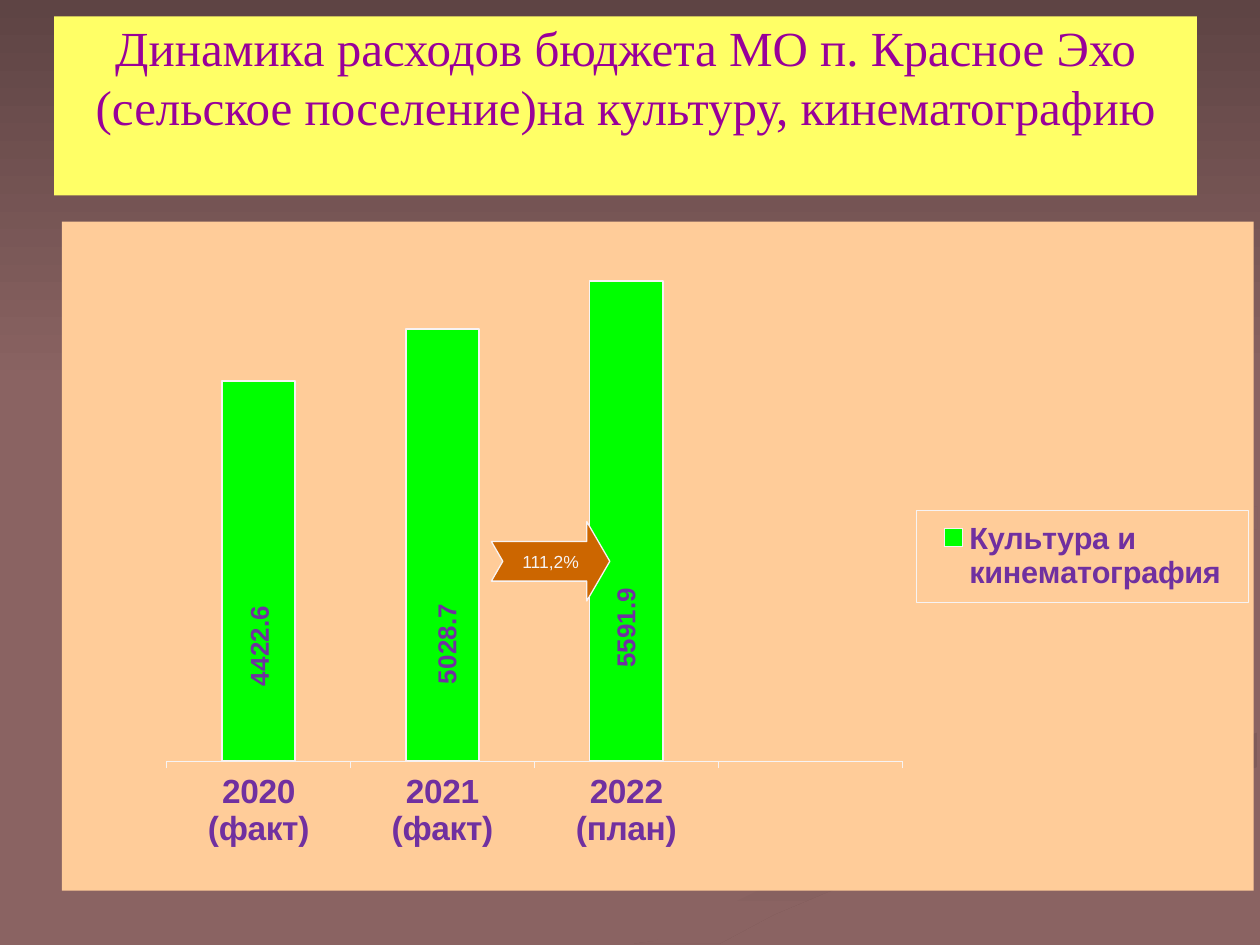
from dataclasses import dataclass

from lxml.etree import SubElement
from pptx import Presentation
from pptx.chart.data import CategoryChartData
from pptx.dml.color import RGBColor
from pptx.enum.chart import XL_CHART_TYPE as Kind
from pptx.enum.chart import XL_LABEL_POSITION as Spot
from pptx.enum.chart import XL_LEGEND_POSITION as Side
from pptx.enum.chart import XL_TICK_LABEL_POSITION as Tick
from pptx.enum.chart import XL_TICK_MARK as Mark
from pptx.enum.text import MSO_ANCHOR as Anchor
from pptx.enum.text import PP_ALIGN as Align
from pptx.enum.shapes import MSO_SHAPE as Form
from pptx.oxml import parse_xml
from pptx.oxml.ns import nsdecls, qn
from pptx.util import Inches, Pt

BASE = RGBColor(0x8A, 0x63, 0x62)
DARK = RGBColor(0x5E, 0x44, 0x44)
SHADE = RGBColor(0x84, 0x5F, 0x5E)
DEEP = RGBColor(0x7F, 0x5B, 0x5A)
YELLOW = RGBColor(0xFF, 0xFF, 0x66)
PLUM = RGBColor(0x99, 0x00, 0x99)
VIOLET = RGBColor(0x70, 0x30, 0xA0)
PEACH = RGBColor(0xFF, 0xCC, 0x99)
GREEN = RGBColor(0x00, 0xFF, 0x00)
ORANGE = RGBColor(0xCC, 0x66, 0x00)
PALE = RGBColor(0xF7, 0xF3, 0xF3)


@dataclass
class Bar:
    """One year's spending; its label's shift is in percent of the chart."""
    year: str
    value: float | None
    dx: float = 0
    dy: float = 0


@dataclass
class Patch:
    """Background outline in inches, with its gradient (counter-clockwise)."""
    points: list[tuple[float, float]]
    start: RGBColor
    end: RGBColor
    angle: int


BARS = [
    Bar("2020 (факт)", 4422.6, 0.1, 11.2),
    Bar("2021 (факт)", 5028.7, 0.4, 14.8),
    Bar("2022 (план)", 5591.9, 0, 16),
    Bar("", None),
]

PATCHES = [
    Patch([(7.81, 5.53), (7.45, 5.38), (6.42, 5.07), (5.87, 4.81), (5.75, 4.59),
           (5.7, 4.72), (6.02, 4.95), (7.14, 5.3), (7.76, 5.53), (7.86, 5.66),
           (7.67, 5.87), (7.14, 6.05), (5.79, 6.39), (4.58, 6.74), (3.76, 7.07),
           (3, 7.49), (3.61, 7.49), (4.31, 7.14), (5.32, 6.74), (6.23, 6.47),
           (7.4, 6.18), (7.86, 6.01), (8, 5.81)], BASE, SHADE, 0),
    Patch([(9.43, 5.7), (9.3, 5.53), (8.88, 5.35), (7.92, 5.09), (7.45, 4.9),
           (7.24, 4.64), (7.33, 4.88), (7.66, 5.12), (8.38, 5.36), (9, 5.57),
           (9.18, 5.81), (8.94, 6.05), (9.32, 5.89)], BASE, SHADE, 315),
    Patch([(5.19, 7.47), (5.03, 7.49), (5.71, 7.49), (6.14, 7.26), (6.95, 6.92),
           (7.85, 6.61), (9.03, 6.3), (9.98, 6.09), (9.98, 5.81), (9.5, 5.98),
           (8.31, 6.29), (7.64, 6.47), (6.3, 6.93), (5.69, 7.19)],
          DEEP, BASE, 270),
    Patch([(7.25, 4.64), (7.45, 4.9), (7.93, 5.09), (8.89, 5.35), (9.31, 5.53),
           (9.43, 5.75), (9.19, 5.97), (8.43, 6.18), (7.04, 6.55), (5.73, 7.03),
           (4.77, 7.49), (5.19, 7.47), (6.3, 6.93), (7.65, 6.47), (9.04, 6.1),
           (9.99, 5.81), (9.99, 5.38), (9.23, 5.23), (8.32, 4.98), (7.86, 4.73),
           (7.86, 4.53), (8.35, 4.3), (9.33, 4.15), (9.99, 4.02), (9.99, 3.87),
           (9.2, 4.01), (7.88, 4.22), (7.42, 4.39)], BASE, BASE, 0),
    Patch([(7.81, 4.6), (7.91, 4.78), (8.26, 4.96), (8.05, 4.76), (8.16, 4.59),
           (8.59, 4.43), (9.36, 4.29), (9.98, 4.2), (9.98, 4.02), (8.98, 4.18),
           (8.21, 4.34), (7.91, 4.47)], SHADE, BASE, 315),
    Patch([(6.83, 4.3), (7.86, 4.12), (8.55, 3.91), (8.89, 3.62), (8.9, 3.24),
           (8.64, 2.91), (8.21, 2.61), (7.62, 2.33), (8.26, 2.66), (8.76, 3.06),
           (8.89, 3.35), (8.7, 3.65), (8.18, 3.86), (6.76, 4.14), (6.05, 4.33),
           (5.77, 4.62), (5.9, 4.84), (6.22, 5), (5.93, 4.7), (6.14, 4.48)],
          SHADE, BASE, 315),
    Patch([(0, 0), (0, 3.08), (10, 3.08), (10, 0)], DARK, BASE, 270),
]


def set_font(font, size: float, color: RGBColor, bold: bool = False,
             face: str = "Arial") -> None:
    font.name, font.size, font.bold = face, Pt(size), bold
    font.color.rgb = color


def add_text(shape, text: str, size: float, color: RGBColor, face: str) -> None:
    para = shape.text_frame.paragraphs[0]
    para.alignment = Align.CENTER
    run = para.add_run()
    run.text = text
    set_font(run.font, size, color, face=face)


def make_layout(modes: dict[str, str], **sizes: float):
    """Manual chart layout; sizes are in percent of the chart."""
    root = parse_xml(f"<c:layout {nsdecls('c')}/>")
    manual = SubElement(root, qn("c:manualLayout"))
    shares = {tag: str(size / 100) for tag, size in sizes.items()}
    for tag, value in (modes | shares).items():
        SubElement(manual, qn(f"c:{tag}")).set("val", value)
    return root


def make_box(fill: RGBColor | None, line: RGBColor | None):
    """Shape properties for chart parts that have no format object."""
    def paint(color: RGBColor | None) -> str:
        if color is None:
            return "<a:noFill/>"
        return f'<a:solidFill><a:srgbClr val="{color}"/></a:solidFill>'
    return parse_xml(f"<c:spPr {nsdecls('c', 'a')}>{paint(fill)}"
                     f'<a:ln w="6350">{paint(line)}</a:ln></c:spPr>')


def draw_patch(slide, patch: Patch) -> None:
    spots = [(Inches(x), Inches(y)) for x, y in patch.points]
    path = slide.shapes.build_freeform(*spots[0])
    path.add_line_segments(spots[1:])
    shape = path.convert_to_shape()
    shape.shadow.inherit = False
    shape.line.fill.background()
    shape.fill.gradient()
    shape.fill.gradient_angle = patch.angle
    for stop, color in zip(shape.fill.gradient_stops, (patch.start, patch.end)):
        stop.color.rgb = color


def draw_back(slide) -> None:
    back = slide.background.fill
    back.solid()
    back.fore_color.rgb = BASE
    for patch in PATCHES:
        draw_patch(slide, patch)


def draw_title(slide) -> None:
    title = slide.shapes.title
    title.left, title.top = Inches(0.43), Inches(0.13)
    title.width, title.height = Inches(9.07), Inches(1.42)
    title.fill.solid()
    title.fill.fore_color.rgb = YELLOW
    frame = title.text_frame
    frame.word_wrap, frame.vertical_anchor = True, Anchor.TOP
    frame.margin_top = Inches(0.01)
    add_text(title, "Динамика расходов бюджета МО п. Красное Эхо "
             "(сельское поселение)на культуру, кинематографию",
             28, PLUM, "Times New Roman")
    title.element.getparent().append(title.element)  # above the background


def draw_label(series, index: int, bar: Bar) -> None:
    label = series.points[index].data_label
    set_font(label.font, 14.8, VIOLET, True)
    label.position = Spot.CENTER
    group = series.data_labels._element
    for lead in group.findall(qn("c:showLeaderLines")):
        lead.set("val", "0")
    node = group.findall(qn("c:dLbl"))[index]
    node.insert(1, make_layout({}, x=bar.dx, y=bar.dy))
    body = node.find(f".//{qn('a:bodyPr')}")
    body.set("rot", "-5400000")
    body.set("vert", "horz")


def draw_chart(slide) -> None:
    data = CategoryChartData()
    data.categories = [bar.year for bar in BARS]
    data.add_series("Культура и кинематография", [bar.value for bar in BARS])
    chart = slide.shapes.add_chart(
        Kind.COLUMN_CLUSTERED, Inches(0.49), Inches(1.76),
        Inches(9.46), Inches(5.31), data).chart
    set_font(chart.font, 19.1, PALE, True)
    chart.has_title = False
    space = chart._chartSpace
    space.chart.addnext(make_box(PEACH, None))
    edge = {"xMode": "edge", "yMode": "edge"}

    # Plot area and bars
    area = space.chart.plotArea
    for old in area.findall(qn("c:layout")):
        area.remove(old)
    area.insert(0, make_layout({"layoutTarget": "inner"} | edge,
                               x=8.8, y=3.6, w=61.7, h=77))
    plot = chart.plots[0]
    plot.gap_width = 150
    plot.vary_by_categories = False
    series = plot.series[0]
    series.format.fill.solid()
    series.format.fill.fore_color.rgb = GREEN
    series.format.line.color.rgb = PALE
    series.format.line.width = Pt(1.06)
    for index, bar in enumerate(BARS):
        if bar.value is not None:
            draw_label(series, index, bar)

    # Axes
    years, sums = chart.category_axis, chart.value_axis
    set_font(years.tick_labels.font, 19.1, VIOLET, True)
    years.tick_label_position = Tick.LOW
    years.major_tick_mark = Mark.OUTSIDE
    years.format.line.color.rgb = PALE
    years.format.line.width = Pt(0.25)
    sums.minimum_scale, sums.maximum_scale, sums.major_unit = 0, 6000, 1000
    sums.has_major_gridlines = False
    sums.visible = False

    # Legend
    chart.has_legend = True
    legend = chart.legend
    legend.position = Side.RIGHT
    legend.include_in_layout = False
    set_font(legend.font, 17.5, VIOLET, True)
    root = legend._element
    for old in root.findall(qn("c:layout")):
        root.remove(old)
    root.find(qn("c:legendPos")).addnext(
        make_layout(edge, x=71.7, y=43.1, w=27.9, h=13.8))
    root.find(qn("c:overlay")).addnext(make_box(None, PALE))


def draw_arrow(slide) -> None:
    arrow = slide.shapes.add_shape(Form.NOTCHED_RIGHT_ARROW, Inches(3.9),
                                   Inches(4.14), Inches(0.94), Inches(0.63))
    arrow.adjustments[0], arrow.adjustments[1] = 0.5, 0.29
    arrow.shadow.inherit = False
    arrow.fill.solid()
    arrow.fill.fore_color.rgb = ORANGE
    arrow.line.color.rgb = PALE
    arrow.line.width = Pt(0.75)
    arrow.text_frame.word_wrap = False
    arrow.text_frame.vertical_anchor = Anchor.MIDDLE
    add_text(arrow, "111,2%", 10, PALE, "Arial")


def main() -> None:
    deck = Presentation()
    deck.slide_width, deck.slide_height = Inches(10), Inches(7.5)
    slide = deck.slides.add_slide(deck.slide_layouts[5])
    for draw in (draw_back, draw_title, draw_chart, draw_arrow):
        draw(slide)
    deck.save("out.pptx")


if __name__ == "__main__":
    main()
